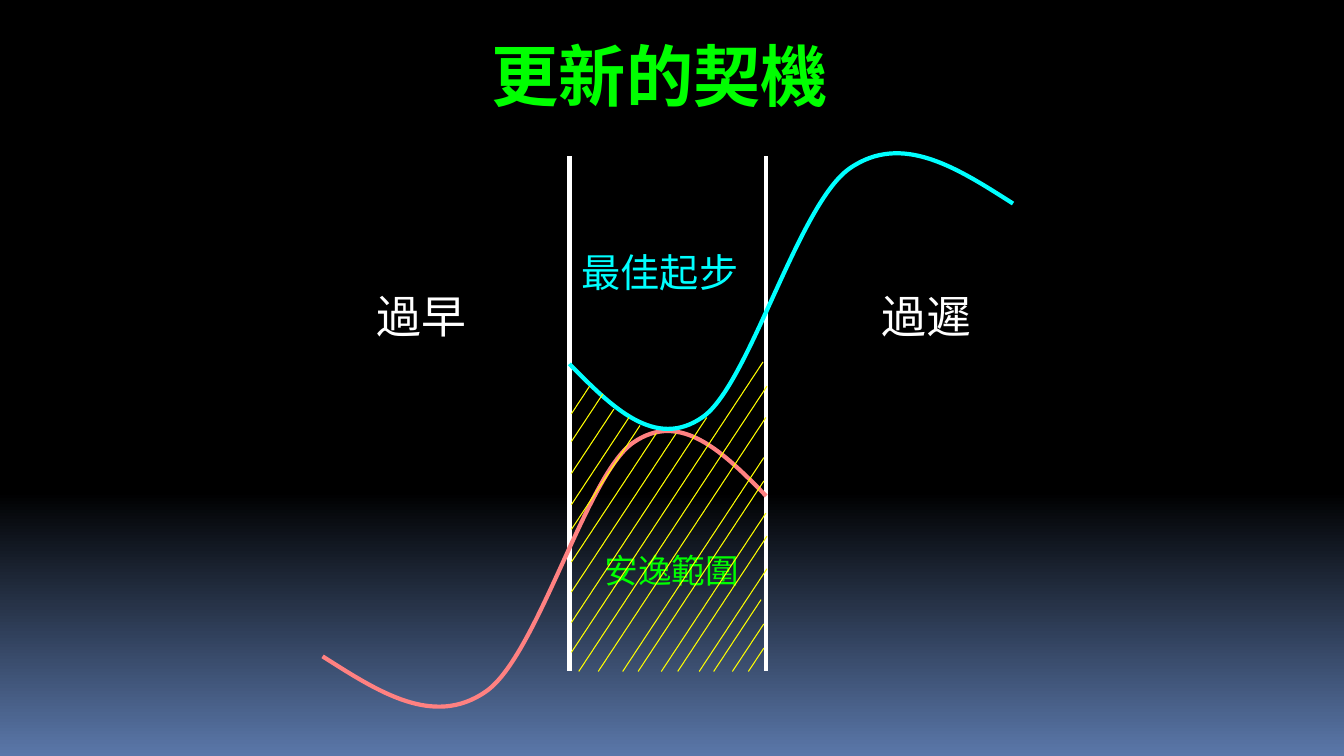
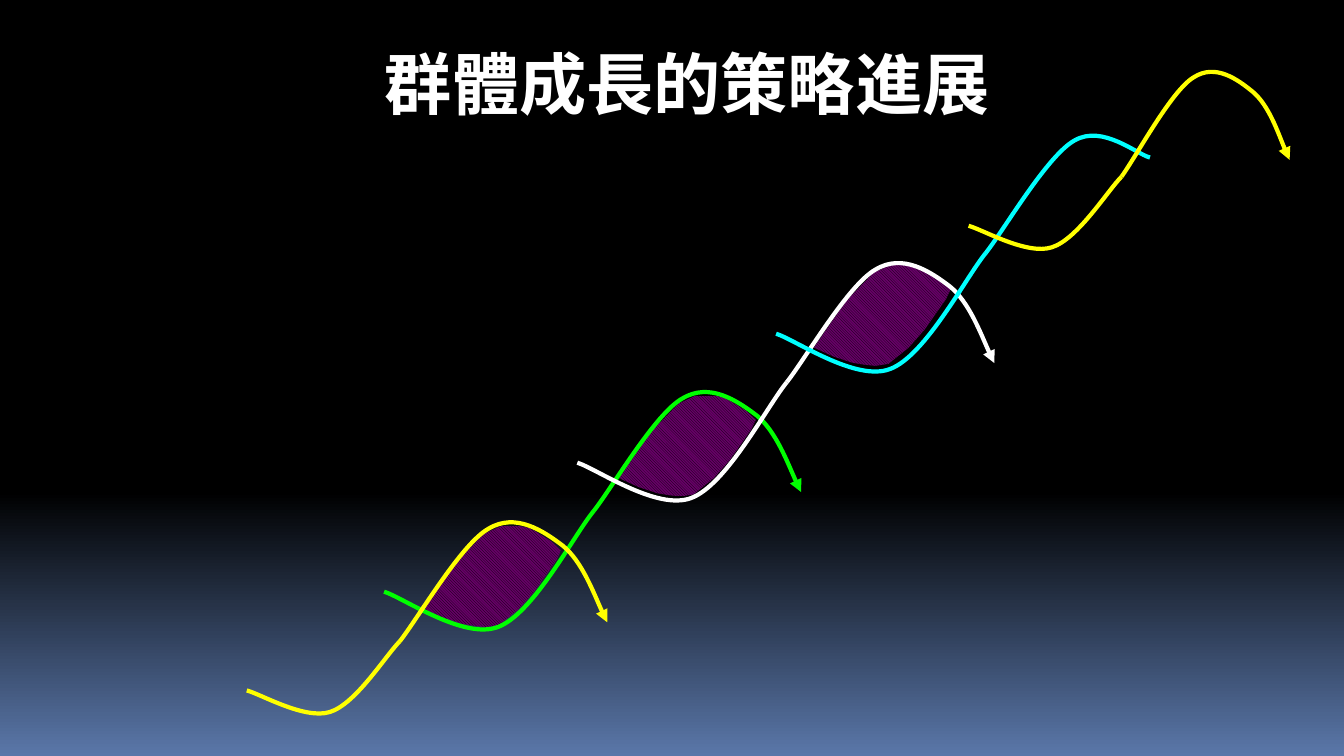
from copy import deepcopy

from lxml.etree import SubElement
from pptx import Presentation
from pptx.dml.color import RGBColor
from pptx.enum.dml import MSO_PATTERN
from pptx.enum.shapes import MSO_CONNECTOR
from pptx.enum.text import PP_ALIGN
from pptx.oxml.ns import qn
from pptx.util import Cm, Pt

BLACK = RGBColor(0x00, 0x00, 0x00)
DUSK = RGBColor(0x5A, 0x77, 0xA9)
WHITE = RGBColor(0xFF, 0xFF, 0xFF)
GREEN = RGBColor(0x00, 0xFF, 0x00)
CYAN = RGBColor(0x00, 0xFF, 0xFF)
YELLOW = RGBColor(0xFF, 0xFF, 0x00)
CORAL = RGBColor(0xFF, 0x81, 0x81)
PURPLE = RGBColor(0x66, 0x00, 0x66)

TITLE_FONT = "Noto Sans CJK TC"
BODY_FONT = "Arial"

LIFE_CYCLE = [(0, 0), (1.4, 0.89), (2.79, 1.8), (4.11, 0.89), (5.41, 0),
              (6.65, -4.57), (7.82, -5.38), (9.02, -6.22), (10.11, -5.13),
              (11.18, -4.04)]
RISE = [(0, 0), (0.48, 0.15), (2.01, 1.22), (2.87, 0.89), (3.76, 0.56),
        (4.78, -1.42), (5.28, -2.03)]
CREST = [(0, 0), (0.46, -0.58), (1.55, -2.46), (2.24, -2.84), (2.92, -3.25),
         (3.61, -2.79), (4.11, -2.41), (4.6, -2.01), (5.05, -0.81),
         (5.23, -0.48)]
SHORT_CREST = CREST[:4] + [(2.95, -3.25), (3.81, -2.49), (4.14, -2.41)]
OVERLAP = [(3.33, 0.86), (2.79, 1.63), (2.39, 2.08), (1.88, 2.49),
           (1.55, 2.54), (1.27, 2.51), (0.97, 2.46), (0.51, 2.31), (0, 2.08),
           (0.81, 0.91), (1.5, 0.2), (1.93, 0), (2.41, 0), (2.67, 0.05),
           (3.2, 0.38), (3.45, 0.61)]

LEFT_WALL, RIGHT_WALL = 14.35, 19.3
WALL_TOP, FLOOR = 3.94, 16.92
HATCH_LEFT, HATCH_SLOPE = 14.4, 0.66
HATCH_TOPS = [
    (14.86, 9.73), (15.19, 9.93), (15.47, 10.31), (15.85, 10.52),
    (16.13, 10.72), (16.54, 10.92), (17.04, 10.92), (17.81, 10.52),
    (19.23, 9.12), (19.33, 9.73), (19.3, 10.52), (19.25, 11.53),
    (19.25, 12.12), (19.3, 12.93), (19.33, 13.51), (19.33, 14.33),
    (19.18, 15.11), (19.25, 15.72), (19.25, 16.33),
]


class Deck:
    def __init__(self):
        self.presentation = Presentation()
        self.presentation.slide_width = Cm(33.87)
        self.presentation.slide_height = Cm(19.05)
        self.slide = None
        self.set_background()

    def set_background(self):
        fill = self.presentation.slide_master.background.fill
        fill.gradient()
        fill.gradient_angle = 270
        first, last = fill.gradient_stops
        first.color.rgb, last.color.rgb = BLACK, DUSK
        middle = deepcopy(first._gs)
        middle.set("pos", "65000")
        first._gs.addnext(middle)

    def new_slide(self):
        layout = self.presentation.slide_layouts[6]
        self.slide = self.presentation.slides.add_slide(layout)

    def text(self, words, left, top, width, height, size, color,
             font_name=BODY_FONT, bold=False):
        box = self.slide.shapes.add_textbox(
            Cm(left), Cm(top), Cm(width), Cm(height))
        box.text_frame.word_wrap = True
        paragraph = box.text_frame.paragraphs[0]
        paragraph.text = words
        paragraph.alignment = PP_ALIGN.CENTER
        font = paragraph.font
        font.size, font.bold, font.name = Pt(size), bold, font_name
        font.color.rgb = color
        SubElement(font._rPr, qn("a:ea"), typeface=TITLE_FONT)

    def title(self, words, left, top, width, color):
        self.text(words, left, top, width, 2.31, 48, color, TITLE_FONT, True)

    def line(self, start, end, color, weight):
        connector = self.slide.shapes.add_connector(
            MSO_CONNECTOR.STRAIGHT, *map(Cm, start + end))
        connector.line.color.rgb = color
        connector.line.width = Pt(weight)
        SubElement(connector._element.spPr, qn("a:effectLst"))

    def outline(self, points, origin, scale=(1, 1), close=False):
        placed = [tuple(Cm(o + s * v) for o, s, v in zip(origin, scale, point))
                  for point in points]
        builder = self.slide.shapes.build_freeform(*placed[0])
        builder.add_line_segments(placed[1:], close=close)
        shape = builder.convert_to_shape()
        shape.shadow.inherit = False
        return shape

    def curve(self, points, origin, color, scale=(1, 1), arrow=False):
        shape = self.outline(points, origin, scale)
        shape.fill.background()
        shape.line.color.rgb = color
        shape.line.width = Pt(3)
        trace = next(shape._element.iter(qn("a:path")))
        segments = trace.findall(qn("a:lnTo"))
        for index, segment in enumerate(segments):
            if index % 3 == 0:
                bezier = SubElement(trace, qn("a:cubicBezTo"))
            bezier.append(segment[0])
            trace.remove(segment)
        if arrow:
            SubElement(shape.line._get_or_add_ln(), qn("a:tailEnd"),
                       type="triangle")

    def wave(self, start, color, rise_scale=(1, 1), crest_scale=(1, 1),
             crest=CREST):
        self.curve(RISE, start, color, rise_scale)
        turn = [o + s * v for o, s, v in zip(start, rise_scale, RISE[-1])]
        self.curve(crest, turn, color, crest_scale, arrow=crest is CREST)

    def overlap(self, left, top):
        shape = self.outline(OVERLAP, (left, top), close=True)
        shape.line.fill.background()
        shape.fill.patterned()
        shape.fill.pattern = MSO_PATTERN.DARK_DOWNWARD_DIAGONAL
        shape.fill.fore_color.rgb = BLACK
        shape.fill.back_color.rgb = PURPLE


def add_renewal_slide(deck):
    deck.new_slide()
    deck.title("更新的契機", 5.13, 0.74, 22.99, GREEN)
    deck.text("最佳起步", 14.33, 6.12, 4.6, 1.45, 28, CYAN)
    for x in (LEFT_WALL, RIGHT_WALL):
        deck.line((x, WALL_TOP), (x, FLOOR), WHITE, 3)
    deck.curve(LIFE_CYCLE, (8.13, 16.54), CORAL)
    deck.curve(LIFE_CYCLE, (25.53, 5.13), CYAN, scale=(-1, -1))
    deck.text("安逸範圍", 14.53, 13.72, 4.8, 1.27, 24, GREEN)
    deck.text("過早", 7.92, 7.14, 5.41, 1.63, 32, WHITE)
    deck.text("過遲", 19.94, 7.14, 6.81, 1.63, 32, WHITE)
    for x, y in HATCH_TOPS:
        drop = min((x - HATCH_LEFT) / HATCH_SLOPE, FLOOR - y)
        deck.line((x, y), (x - HATCH_SLOPE * drop, y + drop), YELLOW, 0.75)


def add_growth_slide(deck):
    deck.new_slide()
    deck.title("群體成長的策略進展", 6.32, 0.94, 22, WHITE)
    for step in range(3):
        deck.overlap(10.69 + 4.91 * step, 13.26 - 3.29 * step)
    short_rise = (0.73, 0.61)
    deck.wave((9.68, 14.91), GREEN)
    deck.wave((14.55, 11.66), WHITE)
    deck.wave((19.56, 8.41), CYAN, crest=SHORT_CREST)
    deck.wave((6.22, 17.4), YELLOW, short_rise)
    deck.wave((24.41, 5.69), YELLOW, short_rise, (0.81, 0.88))


def main():
    deck = Deck()
    add_renewal_slide(deck)
    add_growth_slide(deck)
    deck.presentation.save("out.pptx")


if __name__ == "__main__":
    main()
